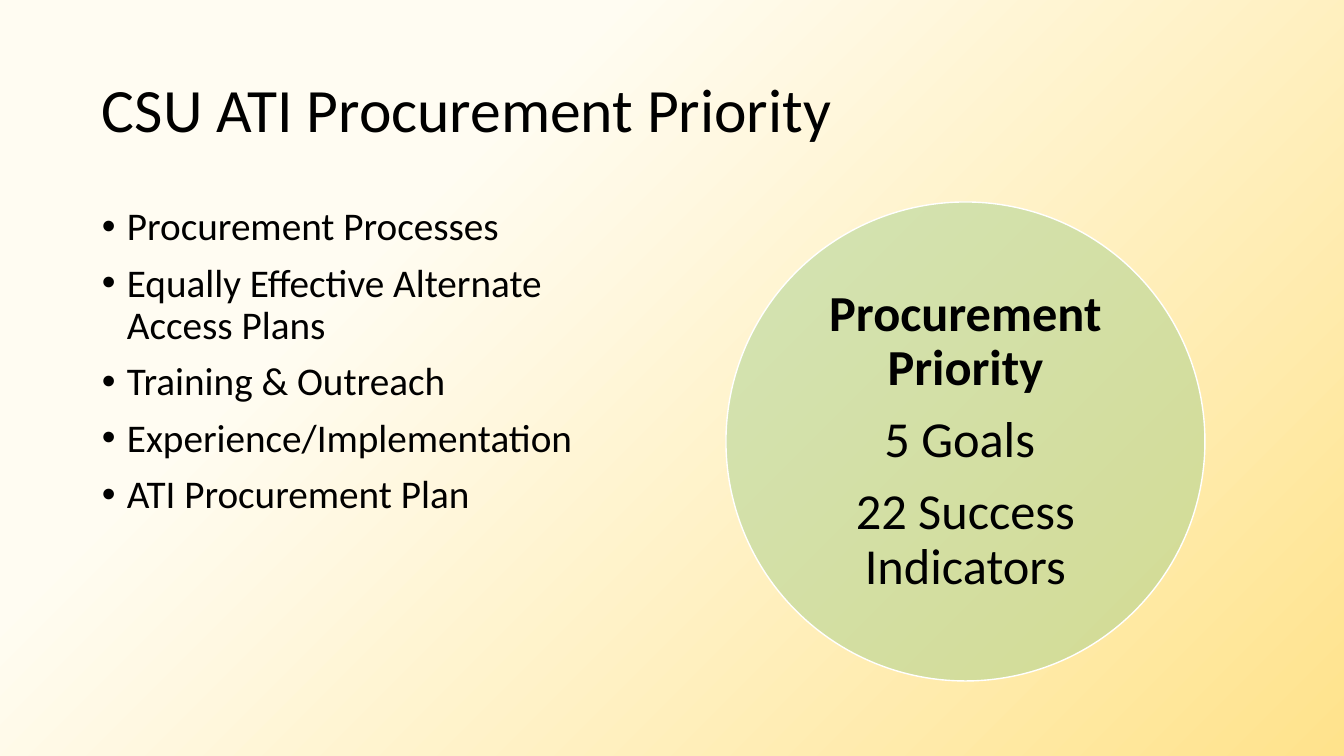
"""Build the CSU ATI procurement priority slide."""
from lxml import etree
from pptx import Presentation
from pptx.dml.color import RGBColor
from pptx.enum.shapes import MSO_SHAPE
from pptx.enum.text import MSO_ANCHOR, MSO_AUTO_SIZE, PP_ALIGN
from pptx.oxml.ns import qn
from pptx.util import Pt

OVAL = MSO_SHAPE.OVAL
MIDDLE, TOP = MSO_ANCHOR.MIDDLE, MSO_ANCHOR.TOP
NO_FIT = MSO_AUTO_SIZE.NONE
LEFT, CENTER = PP_ALIGN.LEFT, PP_ALIGN.CENTER

SLIDE = (1344, 756)
TITLE = "CSU ATI Procurement Priority"
TOPICS = [
    "Procurement Processes",
    "Equally Effective Alternate Access Plans",
    "Training & Outreach",
    "Experience/Implementation",
    "ATI Procurement Plan",
]
SUMMARY = ["Procurement Priority", "5 Goals ", "22 Success Indicators"]
TITLE_BOX = (92, 40, 1159, 146)
TOPICS_BOX = (92, 202, 571, 480)
CIRCLE_BOX = (726, 202, 479, 479)
BACKGROUND = [(0.29, "FFFCF2"), (1, "FFE38C")]
TEXT, GREEN, WHITE = "000000", "A9D18E", "FFFFFF"
FONT = "Calibri"


def px(n):
    return round(n * 914400 / 100.8)


def color(value):
    return RGBColor.from_string(value)


def assign(obj, **values):
    for name, value in values.items():
        setattr(obj, name, value)


def write(tf, lines, size, align, anchor, inset=10, before=0, after=0):
    assign(tf, word_wrap=True, auto_size=NO_FIT, vertical_anchor=anchor,
           margin_left=px(inset), margin_right=px(inset),
           margin_top=px(5), margin_bottom=px(5))
    for i, line in enumerate(lines):
        p = tf.add_paragraph() if i else tf.paragraphs[0]
        assign(p, alignment=align, line_spacing=0.9,
               space_before=Pt(before), space_after=Pt(after))
        r = p.add_run()
        r.text = line
        assign(r.font, name=FONT, size=Pt(size), bold=False)
        r.font.color.rgb = color(TEXT)


def add_bullet(p):
    ppr = p._p.get_or_add_pPr()
    ppr.set("marL", str(px(25)))
    ppr.set("indent", str(-px(25)))
    etree.SubElement(ppr, qn("a:buFont"), typeface="Arial")
    etree.SubElement(ppr, qn("a:buChar"), char="•")


def main():
    prs = Presentation()
    prs.slide_width, prs.slide_height = map(px, SLIDE)
    s = prs.slides.add_slide(prs.slide_layouts[5])

    fill = s.background.fill
    fill.gradient()
    fill.gradient_angle = 315
    for stop, (position, value) in zip(fill.gradient_stops, BACKGROUND):
        stop.position = position
        stop.color.rgb = color(value)

    title = s.shapes.title
    assign(title, **dict(zip(("left", "top", "width", "height"), map(px, TITLE_BOX))))
    write(title.text_frame, [TITLE], 44, LEFT, MIDDLE)

    topics = s.shapes.add_textbox(*map(px, TOPICS_BOX))
    write(topics.text_frame, TOPICS, 28, LEFT, TOP, before=10)
    for p in topics.text_frame.paragraphs:
        add_bullet(p)

    circle = s.shapes.add_shape(OVAL, *map(px, CIRCLE_BOX))
    circle.shadow.inherit = False
    circle.fill.solid()
    circle.fill.fore_color.rgb = color(GREEN)
    srgb = circle._element.spPr.find(qn("a:solidFill")).find(qn("a:srgbClr"))
    etree.SubElement(srgb, qn("a:alpha"), val="50000")
    circle.line.color.rgb = color(WHITE)
    circle.line.width = Pt(1)
    write(circle.text_frame, SUMMARY, 36, CENTER, MIDDLE, inset=26, after=12.6)
    circle.text_frame.paragraphs[0].runs[0].font.bold = True

    prs.save("out.pptx")


if __name__ == "__main__":
    main()
